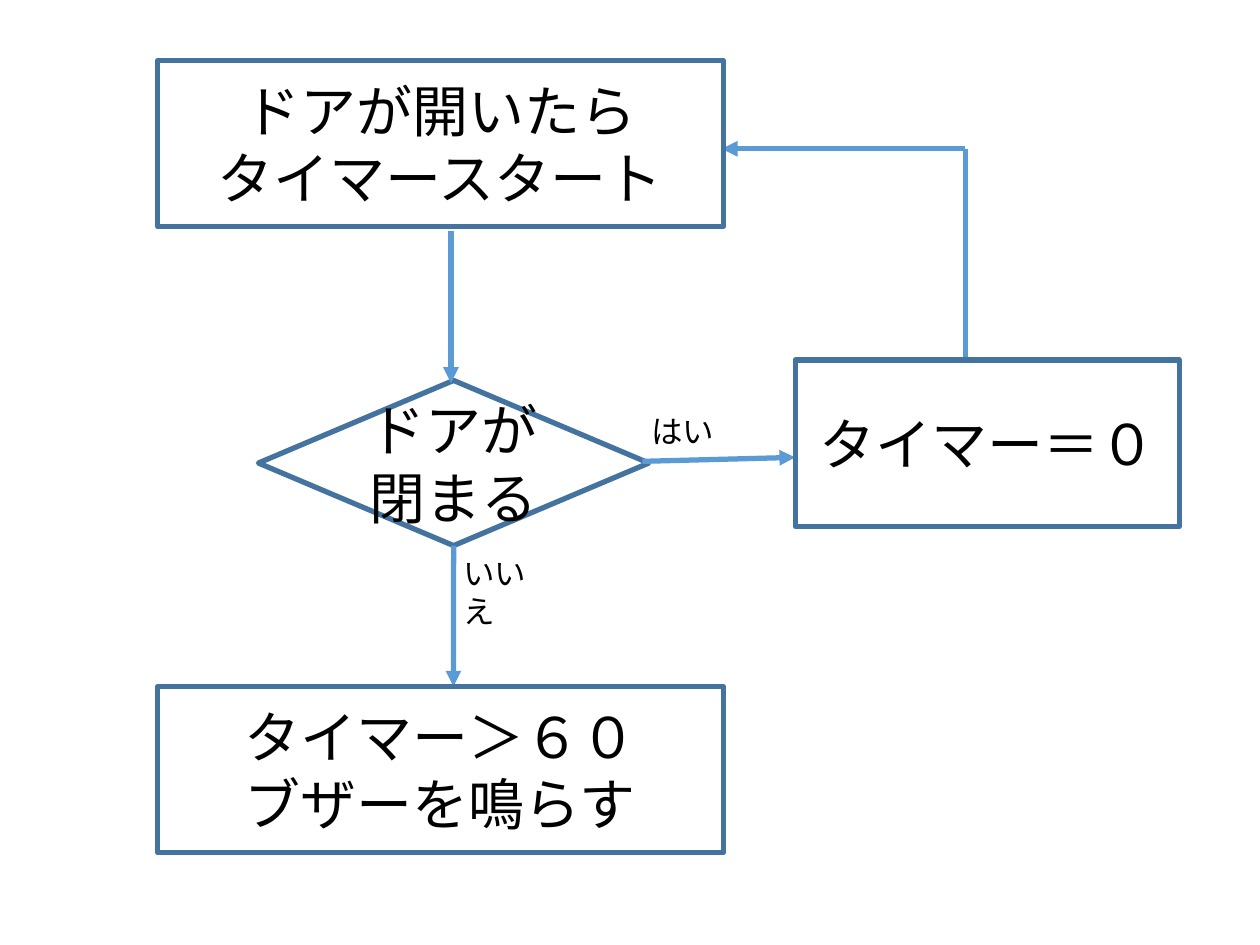
from dataclasses import dataclass

from pptx import Presentation
from pptx.dml.color import RGBColor
from pptx.enum.shapes import MSO_CONNECTOR, MSO_SHAPE
from pptx.enum.text import MSO_ANCHOR, MSO_AUTO_SIZE, PP_ALIGN
from pptx.oxml.ns import qn
from pptx.util import Cm, Pt
from lxml.etree import SubElement

FONT = "Calibri"
BLACK = "000000"
OUTLINE = "43739E"
ARROW = "5B9BD5"
LINE_WIDTH = 3


@dataclass
class Step:
    kind: MSO_SHAPE
    left: float
    top: float
    width: float
    height: float
    text: str


@dataclass
class Label:
    left: float
    top: float
    text: str


@dataclass
class Flow:
    x1: float
    y1: float
    x2: float
    y2: float
    arrow: bool = True
    from_decision: bool = False


DECISION = Step(MSO_SHAPE.FLOWCHART_DECISION, 5.21, 7.67, 7.87, 3.33, "ドアが閉まる")
STEPS = [
    Step(MSO_SHAPE.RECTANGLE, 3.18, 1.22, 11.4, 3.35, "ドアが開いたら\nタイマースタート"),
    Step(MSO_SHAPE.RECTANGLE, 3.18, 13.84, 11.4, 3.35, "タイマー＞６０\nブザーを鳴らす"),
    Step(MSO_SHAPE.RECTANGLE, 16.03, 7.26, 7.75, 3.35, "タイマー＝０"),
]
FLOWS = [
    Flow(9.09, 4.65, 9.09, 7.72),
    Flow(9.14, 11, 9.14, 13.84, from_decision=True),
    Flow(12.95, 9.3, 16.03, 9.22),
    Flow(19.46, 3, 14.55, 3),
    Flow(19.46, 3, 19.46, 7.26, arrow=False),
]
LABELS = [Label(9.09, 11.05, "いいえ"), Label(12.88, 8.18, "はい")]


def color(value: str) -> RGBColor:
    return RGBColor.from_string(value)


def set_text(tf, text: str, size: int, align: PP_ALIGN) -> None:
    tf.word_wrap = True
    tf.text = text
    for p in tf.paragraphs:
        p.alignment = align
        for r in p.runs:
            r.font.name = FONT
            r.font.size = Pt(size)
            r.font.color.rgb = color(BLACK)


def set_line(line, value: str) -> None:
    line.color.rgb = color(value)
    line.width = Pt(LINE_WIDTH)


def add_step(s, step: Step):
    sp = s.shapes.add_shape(
        step.kind, Cm(step.left), Cm(step.top), Cm(step.width), Cm(step.height)
    )
    sp.shadow.inherit = False
    sp.fill.background()
    set_line(sp.line, OUTLINE)
    sp.text_frame.vertical_anchor = MSO_ANCHOR.MIDDLE
    set_text(sp.text_frame, step.text, 32, PP_ALIGN.CENTER)
    return sp


def add_flow(s, flow: Flow, decision) -> None:
    cx = s.shapes.add_connector(
        MSO_CONNECTOR.STRAIGHT, Cm(flow.x1), Cm(flow.y1), Cm(flow.x2), Cm(flow.y2)
    )
    if flow.from_decision:
        cx.begin_connect(decision, 2)
    set_line(cx.line, ARROW)
    if flow.arrow:
        SubElement(cx.line._get_or_add_ln(), qn("a:tailEnd"), type="triangle")
    SubElement(cx._element.spPr, qn("a:effectLst"))


def add_label(s, label: Label) -> None:
    tb = s.shapes.add_textbox(Cm(label.left), Cm(label.top), Cm(2.31), Cm(1.02))
    set_text(tb.text_frame, label.text, 18, PP_ALIGN.LEFT)
    tb.text_frame.auto_size = MSO_AUTO_SIZE.SHAPE_TO_FIT_TEXT


def main() -> None:
    prs = Presentation()
    prs.slide_width, prs.slide_height = Cm(25.4), Cm(19.05)
    s = prs.slides.add_slide(prs.slide_layouts[6])
    decision = add_step(s, DECISION)
    for flow in FLOWS:
        add_flow(s, flow, decision)
    for label in LABELS:
        add_label(s, label)
    for step in STEPS:
        add_step(s, step)
    prs.save("out.pptx")


if __name__ == "__main__":
    main()
